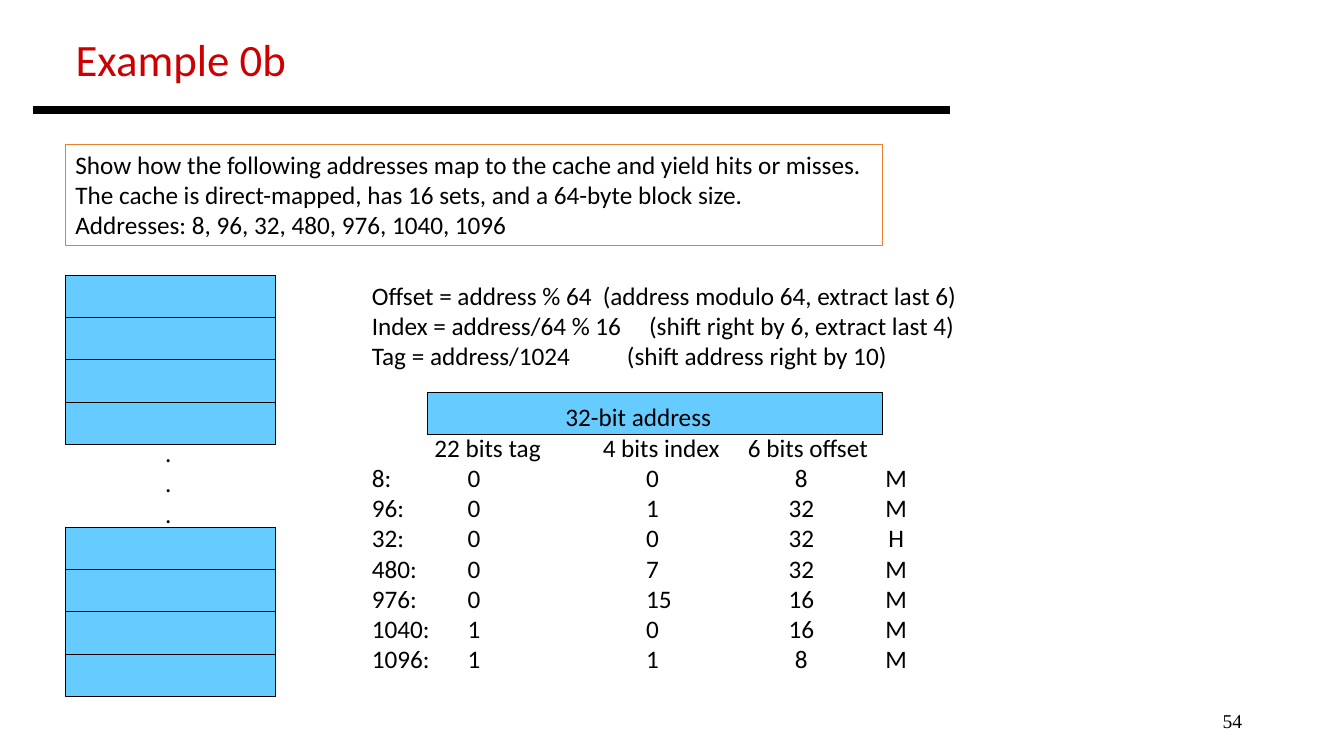
from lxml import etree
from pptx import Presentation
from pptx.dml.color import RGBColor
from pptx.enum.shapes import MSO_CONNECTOR, MSO_SHAPE
from pptx.enum.text import MSO_ANCHOR, PP_ALIGN
from pptx.oxml.ns import qn
from pptx.util import Inches, Pt

BLACK = RGBColor(0x00, 0x00, 0x00)
RED = RGBColor(0xCC, 0x00, 0x00)
BLUE = RGBColor(0x66, 0xCC, 0xFF)
ORANGE = RGBColor(0xED, 0x7D, 0x31)

TITLE = "Example 0b"
QUESTION = [
    "Show how the following addresses map to the cache and yield hits or misses.",
    "The cache is direct-mapped, has 16 sets, and a 64-byte block size.",
    "Addresses: 8, 96, 32, 480, 976, 1040, 1096",
]
FORMULAS = [
    ("Offset = address % 64", "(address modulo 64, extract last 6)", 2.29),
    ("Index = address/64 % 16", "(shift right by 6, extract last 4)", 2.75),
    ("Tag = address/1024", "(shift address right by 10)", 2.53),
]
ADDRESS_LABEL = "32-bit address"
FIELDS = ["22 bits tag", "4 bits index", "6 bits offset"]
ACCESSES = [
    ("8:", "0", "0", "8", "M"),
    ("96:", "0", "1", "32", "M"),
    ("32:", "0", "0", "32", "H"),
    ("480:", "0", "7", "32", "M"),
    ("976:", "0", "15", "16", "M"),
    ("1040:", "1", "0", "16", "M"),
    ("1096:", "1", "1", "8", "M"),
]
SLIDE_NUMBER = "54"

LABEL_TABS = [(1.92, "l")]
FIELD_TABS = [(0.62, "l"), (2.29, "l"), (3.73, "l")]
ACCESS_TABS = [(0.95, "l"), (2.72, "l"), (4.26, "ctr"), (5.2, "ctr")]

CACHE_LEFT, CACHE_WIDTH, ROW_HEIGHT = 0.65, 2.08, 0.42
CACHE_TOPS = [2.73, 5.23]
ROWS_PER_BLOCK = 4


def add_box(slide, left, top, width, height, fill=None, line=BLACK):
    box = slide.shapes.add_shape(
        MSO_SHAPE.RECTANGLE, Inches(left), Inches(top), Inches(width), Inches(height))
    box.shadow.inherit = False
    if fill is None:
        box.fill.background()
    else:
        box.fill.solid()
        box.fill.fore_color.rgb = fill
    box.line.color.rgb = line
    box.line.width = Pt(0.75)
    return box


def add_text_box(slide, left, top, width, height):
    return slide.shapes.add_textbox(
        Inches(left), Inches(top), Inches(width), Inches(height))


def write(shape, lines, size=18, color=BLACK, font="Calibri",
          align=PP_ALIGN.LEFT, anchor=MSO_ANCHOR.TOP, wrap=True):
    frame = shape.text_frame
    frame.word_wrap = wrap
    frame.vertical_anchor = anchor
    frame.text = "\n".join(lines)
    for paragraph in frame.paragraphs:
        paragraph.alignment = align
        for run in paragraph.runs:
            run.font.size = Pt(size)
            run.font.name = font
            run.font.color.rgb = color


def set_tabs(paragraph, tabs):
    properties = paragraph._p.get_or_add_pPr()
    tab_list = etree.SubElement(properties, qn("a:tabLst"))
    for position, align in tabs:
        etree.SubElement(tab_list, qn("a:tab"), pos=str(Inches(position)), algn=align)


def add_title(slide):
    title = slide.shapes.title
    title.left, title.top = Inches(0.65), Inches(0.26)
    title.width, title.height = Inches(2.31), Inches(0.64)
    write(title, [TITLE], size=32, color=RED, wrap=False)
    rule = slide.shapes.add_connector(
        MSO_CONNECTOR.STRAIGHT, Inches(0.33), Inches(1.09), Inches(9.42), Inches(1.09))
    rule.line.color.rgb = BLACK
    rule.line.width = Pt(6)
    etree.SubElement(rule._element.spPr, qn("a:effectLst"))


def add_cache(slide):
    for top in CACHE_TOPS:
        for row in range(ROWS_PER_BLOCK):
            add_box(slide, CACHE_LEFT, top + row * ROW_HEIGHT,
                    CACHE_WIDTH, ROW_HEIGHT, BLUE)
    write(add_text_box(slide, 1.54, 4.29, 0.27, 1.01), ["."] * 3, wrap=False)


def add_solution(slide):
    add_box(slide, 4.24, 3.89, 4.51, 0.42, BLUE)
    rows = [(f"{formula}\t{note}", [(tab, "l")]) for formula, note, tab in FORMULAS]
    rows.append(("\t" + ADDRESS_LABEL, LABEL_TABS))
    rows.append(("\t" + "\t".join(FIELDS), FIELD_TABS))
    rows += [("\t".join(access), ACCESS_TABS) for access in ACCESSES]
    solution = add_text_box(slide, 3.59, 2.73, 6.07, 4.04)
    write(solution, [text for text, tabs in rows])
    paragraphs = solution.text_frame.paragraphs
    paragraphs[len(FORMULAS)].space_before = Pt(22)
    for paragraph, (text, tabs) in zip(paragraphs, rows):
        set_tabs(paragraph, tabs)


def main():
    presentation = Presentation()
    presentation.slide_width = Inches(13.33)
    presentation.slide_height = Inches(7.5)
    slide = presentation.slides.add_slide(presentation.slide_layouts[5])
    add_title(slide)
    write(add_box(slide, 0.65, 1.43, 8.1, 1.01, line=ORANGE), QUESTION)
    add_cache(slide)
    add_solution(slide)
    write(add_text_box(slide, 9.42, 6.95, 3, 0.4), [SLIDE_NUMBER], size=14,
          font="Times New Roman", align=PP_ALIGN.RIGHT, anchor=MSO_ANCHOR.MIDDLE)
    presentation.save("out.pptx")


if __name__ == "__main__":
    main()
